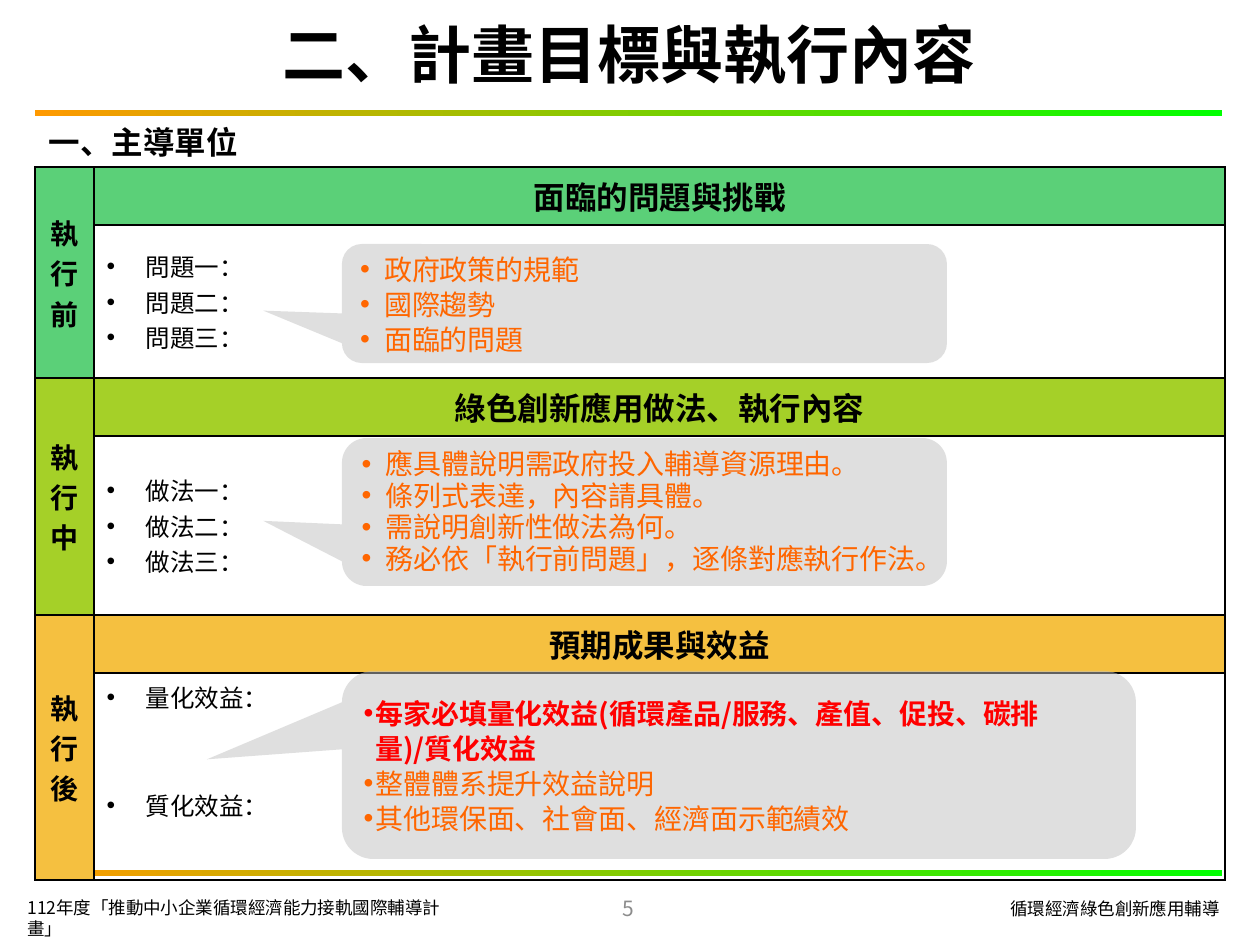
from lxml.etree import SubElement
from pptx import Presentation
from pptx.dml.color import RGBColor
from pptx.enum.shapes import MSO_SHAPE as SHAPE
from pptx.enum.text import MSO_ANCHOR as ANCHOR, PP_ALIGN as ALIGN
from pptx.oxml.ns import qn
from pptx.util import Pt

FONT = "Noto Sans CJK SC"
BLACK, ORANGE, RED, GREY = "000000", "FF6600", "FF0000", "8C8C8C"


def px(n):
    """Turn slide pixels into EMU."""
    return round(n * 914400 / 126)


def color(value):
    """Turn a hex string into a colour."""
    return RGBColor.from_string(value)


def add_run(p, text, size, fill=BLACK, bold=False):
    """Add one formatted run to a paragraph."""
    r = p.add_run()
    r.text = text
    r.font.size, r.font.bold, r.font.name = Pt(size), bold, FONT
    r.font.color.rgb = color(fill)
    SubElement(r._r.get_or_add_rPr(), qn("a:ea"), typeface=FONT)


def set_line(tf, text, size, fill=BLACK, bold=False, align=ALIGN.CENTER):
    """Write a single paragraph into a text frame."""
    p = tf.paragraphs[0]
    p.alignment = align
    add_run(p, text, size, fill, bold)
    return p


def set_bullets(tf, items, size, indent, spacing=None, gap=0):
    """Write bulleted paragraphs from (text, colour, bold) items."""
    for i, (text, fill, bold) in enumerate(items):
        p = tf.paragraphs[0] if i == 0 else tf.add_paragraph()
        pPr = p._p.get_or_add_pPr()
        pPr.set("marL", str(px(indent)))
        pPr.set("indent", str(-px(indent)))
        SubElement(pPr, qn("a:buFont"), typeface="Arial")
        SubElement(pPr, qn("a:buChar"), char="•")
        p.alignment = ALIGN.LEFT
        if spacing:
            p.line_spacing = Pt(spacing)
        if i and gap:
            p.space_before = Pt(gap)
        add_run(p, text, size, fill, bold)


def add_text(slide, box, text, size, wrap=True, anchor=ANCHOR.TOP, **style):
    """Add a one-paragraph text box."""
    tf = slide.shapes.add_textbox(*map(px, box)).text_frame
    tf.word_wrap, tf.vertical_anchor = wrap, anchor
    return set_line(tf, text, size, **style)


def add_bar(slide, top):
    """Add a horizontal orange-to-green bar."""
    sp = slide.shapes.add_shape(SHAPE.RECTANGLE, px(35), px(top), px(1187), px(6))
    sp.shadow.inherit = False
    sp.line.fill.background()
    sp.fill.gradient()
    sp.fill.gradient_angle = 0
    for stop, position, value in zip(sp.fill.gradient_stops, (0, 1), ("FF9900", "00FF00")):
        stop.position, stop.color.rgb = position, color(value)


def add_callout(slide, box, tail, items, indent, spacing):
    """Add a translucent rounded callout with bullets."""
    sp = slide.shapes.add_shape(SHAPE.ROUNDED_RECTANGULAR_CALLOUT, *map(px, box))
    sp.adjustments[0], sp.adjustments[1] = tail
    sp.shadow.inherit = False
    sp.line.fill.background()
    sp.fill.solid()
    sp.fill.fore_color.rgb = color("C0C0C0")
    rgb = sp._element.spPr.find(qn("a:solidFill")).find(qn("a:srgbClr"))
    SubElement(rgb, qn("a:alpha"), val="50000")
    tf = sp.text_frame
    tf.word_wrap, tf.vertical_anchor = True, ANCHOR.MIDDLE
    set_bullets(tf, items, 16, indent, spacing)


def format_cell(cell, fill=None):
    """Set black borders and an optional fill on a cell."""
    tcPr = cell._tc.get_or_add_tcPr()
    for side in ("lnL", "lnR", "lnT", "lnB"):
        ln = SubElement(tcPr, qn(f"a:{side}"), w=str(Pt(1)))
        SubElement(SubElement(ln, qn("a:solidFill")), qn("a:srgbClr"), val=BLACK)
    if fill:
        cell.fill.solid()
        cell.fill.fore_color.rgb = color(fill)
    else:
        cell.fill.background()


def add_phase_table(slide, phases, heights):
    """Add the table with a header and a body row for each phase."""
    frame = slide.shapes.add_table(len(heights), 2, px(35), px(167), px(1190), px(sum(heights)))
    table = frame.table
    table.first_row = table.horz_banding = False
    table.columns[0].width, table.columns[1].width = px(59), px(1131)
    for row, height in zip(table.rows, heights):
        row.height = px(height)
    for i, (label, heading, fill, items, anchor, gap) in enumerate(phases):
        top = 2 * i
        side, below = table.cell(top, 0), table.cell(top + 1, 0)
        header, body = table.cell(top, 1), table.cell(top + 1, 1)
        for cell in (side, below, header):
            format_cell(cell, fill)
        format_cell(body)
        side.merge(below)
        side.vertical_anchor, body.vertical_anchor = ANCHOR.MIDDLE, anchor
        set_line(side.text_frame, label, 16, bold=True)
        set_line(header.text_frame, heading, 18, bold=True)
        set_bullets(body.text_frame, [(t, BLACK, False) for t in items], 14, 39, gap=gap)


def add_title(slide, text):
    """Place and format the title placeholder."""
    title = slide.shapes.title
    title.left, title.top, title.width, title.height = map(px, (0, 16, 1258, 74))
    title.text_frame.vertical_anchor = ANCHOR.MIDDLE
    set_line(title.text_frame, text, 36, bold=True)


def main():
    """Build the slide and save it."""
    prs = Presentation()
    prs.slide_width, prs.slide_height = px(1260), px(945)
    slide = prs.slides.add_slide(prs.slide_layouts[5])
    add_bar(slide, 110)
    add_bar(slide, 870)
    add_text(slide, (15, 891, 467, 34), "112年度「推動中小企業循環經濟能力接軌國際輔導計畫」", 10, align=ALIGN.LEFT)
    add_text(slide, (927, 892, 305, 34), "循環經濟綠色創新應用輔導", 10, align=ALIGN.RIGHT)
    add_title(slide, "二、計畫目標與執行內容")
    add_text(slide, (481, 883, 294, 50), "5", 12, anchor=ANCHOR.MIDDLE, fill=GREY)

    phases = [
        ("執行前", "面臨的問題與挑戰", "5BD078",
         ("問題一：", "問題二：", "問題三："), ANCHOR.MIDDLE, 0),
        ("執行中", "綠色創新應用做法、執行內容", "A5D028",
         ("做法一：", "做法二：", "做法三："), ANCHOR.MIDDLE, 0),
        ("執行後", "預期成果與效益", "F5C040",
         ("量化效益：", "質化效益："), ANCHOR.TOP, 41),
    ]
    add_phase_table(slide, phases, (58, 153, 58, 179, 58, 207))

    methods = ("應具體說明需政府投入輔導資源理由。", "條列式表達，內容請具體。",
               "需說明創新性做法為何。", "務必依「執行前問題」，逐條對應執行作法。")
    problems = ("政府政策的規範", "國際趨勢", "面臨的問題")
    results = [
        ("每家必填量化效益(循環產品/服務、產值、促投、碳排量)/質化效益", RED, True),
        ("整體體系提升效益說明", ORANGE, False),
        ("其他環保面、社會面、經濟面示範績效", ORANGE, False),
    ]
    tail = (-0.63, 0.06)
    add_callout(slide, (342, 438, 605, 148), tail, [(t, ORANGE, False) for t in methods], 24, 18)
    add_callout(slide, (342, 244, 605, 119), tail, [(t, ORANGE, False) for t in problems], 24, 20)
    add_callout(slide, (342, 671, 794, 188), (-0.67, -0.03), results, 12, 20)

    p = add_text(slide, (35, 116, 217, 52), "一、主導單位", 18, wrap=False, bold=True)
    p.line_spacing = Pt(22)
    prs.save("out.pptx")


if __name__ == "__main__":
    main()
